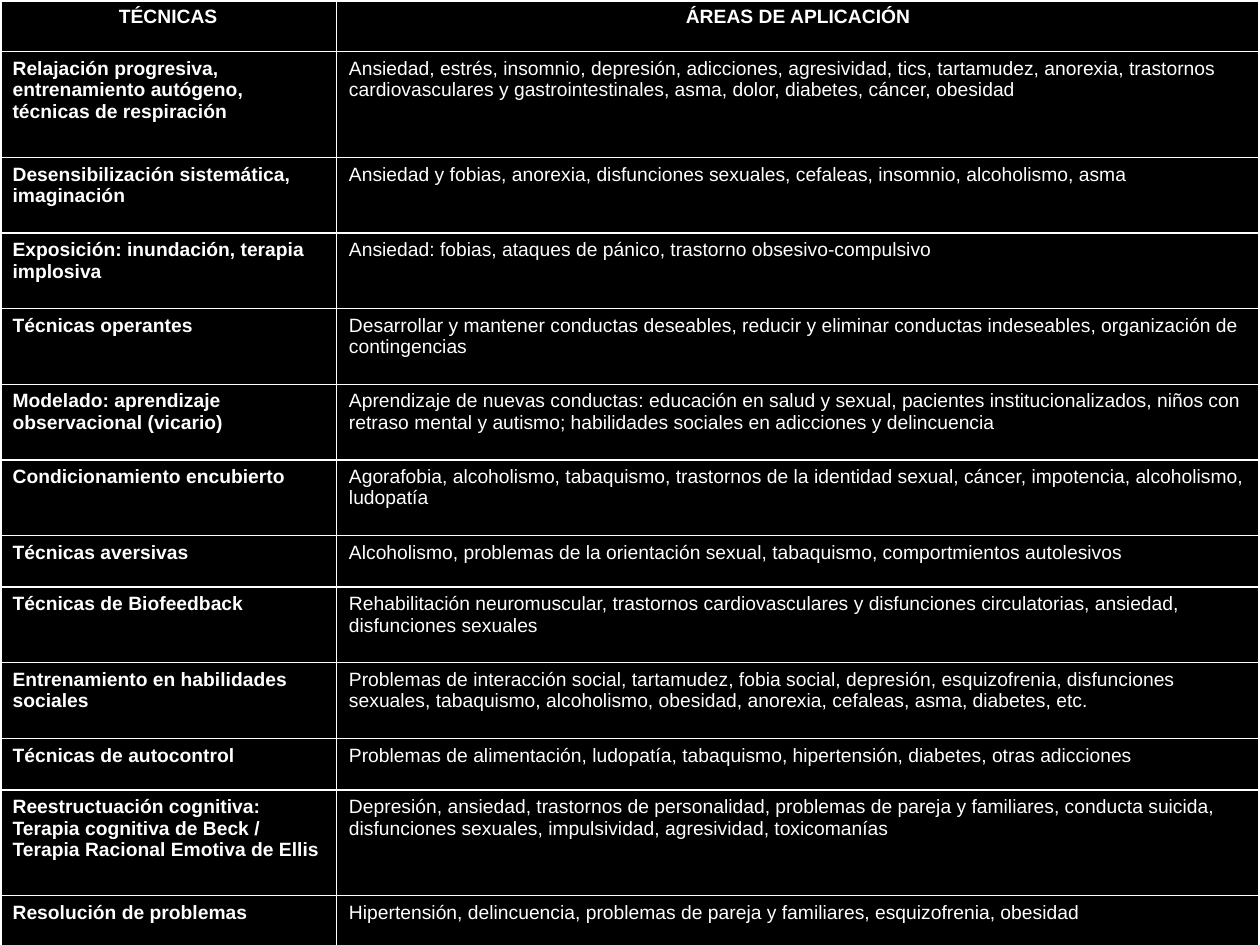
from lxml.etree import SubElement
from pptx import Presentation
from pptx.dml.color import RGBColor
from pptx.enum.text import PP_ALIGN
from pptx.oxml.ns import qn
from pptx.util import Inches, Pt

# Content: technique, areas of application
HEADER = ("TÉCNICAS", "ÁREAS DE APLICACIÓN")
TECHNIQUES = [
    ("Relajación progresiva, entrenamiento autógeno, técnicas de respiración",
     "Ansiedad, estrés, insomnio, depresión, adicciones, agresividad, tics, tartamudez, anorexia, "
     "trastornos cardiovasculares y gastrointestinales, asma, dolor, diabetes, cáncer, obesidad"),
    ("Desensibilización sistemática, imaginación",
     "Ansiedad y fobias, anorexia, disfunciones sexuales, cefaleas, insomnio, alcoholismo, asma"),
    ("Exposición: inundación, terapia implosiva",
     "Ansiedad: fobias, ataques de pánico, trastorno obsesivo-compulsivo"),
    ("Técnicas operantes",
     "Desarrollar y mantener conductas deseables, reducir y eliminar conductas indeseables, "
     "organización de contingencias"),
    ("Modelado: aprendizaje observacional (vicario)",
     "Aprendizaje de nuevas conductas: educación en salud y sexual, pacientes institucionalizados, "
     "niños con retraso mental y autismo; habilidades sociales en adicciones y delincuencia"),
    ("Condicionamiento encubierto",
     "Agorafobia, alcoholismo, tabaquismo, trastornos de la identidad sexual, cáncer, impotencia, "
     "alcoholismo, ludopatía"),
    ("Técnicas aversivas",
     "Alcoholismo, problemas de la orientación sexual, tabaquismo, comportmientos autolesivos"),
    ("Técnicas de Biofeedback",
     "Rehabilitación neuromuscular, trastornos cardiovasculares y disfunciones circulatorias, "
     "ansiedad, disfunciones sexuales"),
    ("Entrenamiento en habilidades sociales",
     "Problemas de interacción social, tartamudez, fobia social, depresión, esquizofrenia, "
     "disfunciones sexuales, tabaquismo, alcoholismo, obesidad, anorexia, cefaleas, asma, "
     "diabetes, etc."),
    ("Técnicas de autocontrol",
     "Problemas de alimentación, ludopatía, tabaquismo, hipertensión, diabetes, otras adicciones"),
    ("Reestructuación cognitiva: Terapia cognitiva de Beck / Terapia Racional Emotiva de Ellis",
     "Depresión, ansiedad, trastornos de personalidad, problemas de pareja y familiares, "
     "conducta suicida, disfunciones sexuales, impulsividad, agresividad, toxicomanías"),
    ("Resolución de problemas",
     "Hipertensión, delincuencia, problemas de pareja y familiares, esquizofrenia, obesidad"),
]
ROWS = [HEADER] + TECHNIQUES

# Grid: row height follows the number of text lines
LINES = [1, 3, 2, 2, 2, 2, 2, 1, 2, 2, 1, 3, 1]
LINE_HEIGHTS = {1: 0.41, 2: 0.6, 3: 0.84}
COLUMNS = [2.67, 7.33]
BLACK, WHITE = "000000", "FFFFFF"
OUTER, INNER = 2.25, 1


def paint(fill, color):
    fill.solid()
    fill.fore_color.rgb = RGBColor.from_string(color)


def add_borders(cell, widths):
    properties = cell._tc.get_or_add_tcPr()
    for side, width in widths.items():
        line = SubElement(properties, qn(f"a:ln{side}"), w=str(Pt(width)))
        color = SubElement(SubElement(line, qn("a:solidFill")), qn("a:srgbClr"))
        color.set("val", WHITE)


def fill_cell(cell, text, row, column):
    # Thick lines on the outer edge, thin lines inside; borders precede the fill
    add_borders(cell, {
        "L": OUTER if column == 0 else INNER,
        "R": OUTER if column == len(COLUMNS) - 1 else INNER,
        "T": OUTER if row == 0 else INNER,
        "B": OUTER if row == len(ROWS) - 1 else INNER,
    })
    paint(cell.fill, BLACK)
    para = cell.text_frame.paragraphs[0]
    para.alignment = PP_ALIGN.CENTER if row == 0 else PP_ALIGN.LEFT
    span = para.add_run()
    span.text = text
    span.font.name = "Arial"
    span.font.size = Pt(11)
    span.font.bold = row == 0 or column == 0
    paint(span.font.fill, WHITE)


def main():
    deck = Presentation()
    deck.slide_width, deck.slide_height = Inches(10), Inches(7.5)
    page = deck.slides.add_slide(deck.slide_layouts[6])
    paint(page.background.fill, BLACK)

    # Table of techniques
    heights = [LINE_HEIGHTS[count] for count in LINES]
    table = page.shapes.add_table(len(ROWS), len(COLUMNS), 0, 0,
                                  deck.slide_width, Inches(sum(heights))).table
    table.horz_banding = False
    for column, width in zip(table.columns, COLUMNS):
        column.width = Inches(width)
    for row, height in zip(table.rows, heights):
        row.height = Inches(height)
    for row, texts in enumerate(ROWS):
        for column, text in enumerate(texts):
            fill_cell(table.cell(row, column), text, row, column)

    deck.save("out.pptx")


if __name__ == "__main__":
    main()
